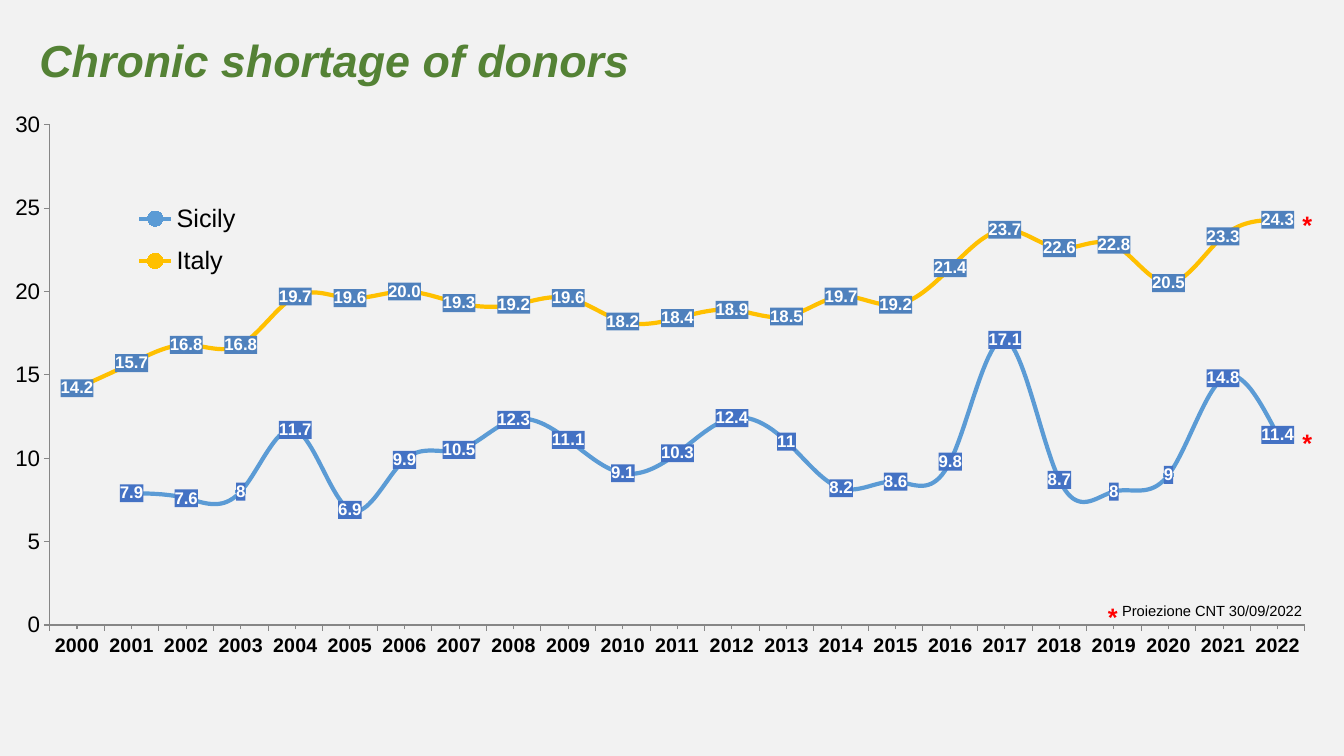
"""Build a slide charting organ donor rates in Sicily and Italy."""
from dataclasses import dataclass

from lxml import etree
from pptx import Presentation
from pptx.chart.data import CategoryChartData
from pptx.dml.color import RGBColor
from pptx.enum.chart import (XL_CHART_TYPE, XL_LABEL_POSITION, XL_LEGEND_POSITION,
                             XL_MARKER_STYLE, XL_TICK_MARK)
from pptx.enum.text import MSO_ANCHOR, MSO_AUTO_SIZE
from pptx.oxml import parse_xml
from pptx.oxml.ns import nsdecls, qn
from pptx.util import Inches, Pt

LINE_CHART = XL_CHART_TYPE.LINE_MARKERS
CENTERED = XL_LABEL_POSITION.CENTER
LEGEND_LEFT = XL_LEGEND_POSITION.LEFT
CIRCLE = XL_MARKER_STYLE.CIRCLE
TICK_OUT = XL_TICK_MARK.OUTSIDE
TICK_NONE = XL_TICK_MARK.NONE
BOTTOM = MSO_ANCHOR.BOTTOM
TOP = MSO_ANCHOR.TOP
GROW = MSO_AUTO_SIZE.SHAPE_TO_FIT_TEXT
NO_FIT = MSO_AUTO_SIZE.NONE

WIDTH, HEIGHT = Inches(13.33), Inches(7.5)


@dataclass(frozen=True)
class Theme:
    font: str = "Arial"
    page: str = "F2F2F2"
    title: str = "548235"
    text: str = "000000"
    star: str = "FF0000"
    label: str = "FFFFFF"
    axis: str = "868686"
    title_size: float = 32
    legend_size: float = 18
    star_size: float = 18
    value_size: float = 16
    year_size: float = 14
    label_size: float = 12
    note_size: float = 10.5
    base_size: float = 10


@dataclass(frozen=True)
class Share:
    left: float
    top: float
    width: float
    height: float

    def lengths(self) -> tuple[int, int, int, int]:
        return (int(self.left * WIDTH), int(self.top * HEIGHT),
                int(self.width * WIDTH), int(self.height * HEIGHT))


@dataclass(frozen=True)
class Region:
    name: str
    color: str
    label_fill: str
    number_format: str
    rates: tuple[float | None, ...]


THEME = Theme()
YEARS = [str(year) for year in range(2000, 2023)]
REGIONS = (
    Region("Sicily", "5B9BD5", "4472C4", "General",
           (None, 7.9, 7.6, 8, 11.7, 6.9, 9.9, 10.5, 12.3, 11.1, 9.1, 10.3,
            12.4, 11, 8.2, 8.6, 9.8, 17.1, 8.7, 8, 9, 14.8, 11.4)),
    Region("Italy", "FFC000", "4F81BD", "0.0",
           (14.2, 15.7, 16.8, 16.8, 19.7, 19.6, 20, 19.3, 19.2, 19.6, 18.2, 18.4,
            18.9, 18.5, 19.7, 19.2, 21.4, 23.7, 22.6, 22.8, 20.5, 23.3, 24.3)),
)
CHART_AREA = Share(0, 0.1347, 1, 0.7573)
PLOT_AREA = Share(0.037, 0.04, 0.934, 0.874)
LEGEND_AREA = Share(0.097, 0.155, 0.085, 0.172)
TITLE_AREA = Share(0.0293, 0.0413, 0.8627, 0.0733)
NOTE_AREA = Share(0.8275, 0.7893, 0.1523, 0.0373)
STAR_AREAS = (
    Share(0.9617, 0.2707, 0.0225, 0.0533),
    Share(0.817, 0.7893, 0.0225, 0.0587),
    Share(0.9617, 0.5587, 0.0225, 0.0533),
)


def style_font(font, size: float, color: str, bold: bool = False, italic: bool = False) -> None:
    font.name, font.size = THEME.font, Pt(size)
    font.bold, font.italic = bold, italic
    font.color.rgb = RGBColor.from_string(color)


def add_text(page, area: Share, text: str, *, size: float, color: str, bold: bool = False,
             italic: bool = False, wrap: bool = False, margin: bool = True,
             anchor: MSO_ANCHOR = TOP, fit: MSO_AUTO_SIZE = GROW) -> None:
    frame = page.shapes.add_textbox(*area.lengths()).text_frame
    frame.word_wrap, frame.auto_size, frame.vertical_anchor = wrap, fit, anchor
    if not margin:
        frame.margin_left = frame.margin_top = frame.margin_right = frame.margin_bottom = 0
    span = frame.paragraphs[0].add_run()
    span.text = text
    style_font(span.font, size, color, bold, italic)


def manual_layout(area: Share, target: str = ""):
    layout = parse_xml(f"<c:layout {nsdecls('c')}><c:manualLayout/></c:layout>")
    settings = [("layoutTarget", target)] if target else []
    settings += [("xMode", "edge"), ("yMode", "edge"), ("x", area.left), ("y", area.top),
                 ("w", area.width), ("h", area.height)]
    for name, value in settings:
        etree.SubElement(layout[0], qn(f"c:{name}"), val=str(value))
    return layout


def style_series(series, region: Region) -> None:
    color = RGBColor.from_string(region.color)
    series.smooth = True
    series.format.line.width = Pt(3)
    series.format.line.color.rgb = color
    series.marker.style, series.marker.size = CIRCLE, 7
    series.marker.format.fill.solid()
    series.marker.format.fill.fore_color.rgb = color
    series.marker.format.line.color.rgb = color
    labels = series.data_labels
    labels.show_value, labels.position = True, CENTERED
    labels.number_format, labels.number_format_is_linked = region.number_format, False
    style_font(labels.font, THEME.label_size, THEME.label, bold=True)
    fill = parse_xml(f"<c:spPr {nsdecls('c', 'a')}><a:solidFill>"
                     f'<a:srgbClr val="{region.label_fill}"/></a:solidFill></c:spPr>')
    labels._element.find(qn("c:txPr")).addprevious(fill)


def style_axis(axis, size: float, bold: bool = False) -> None:
    axis.has_major_gridlines = False
    axis.major_tick_mark, axis.minor_tick_mark = TICK_OUT, TICK_NONE
    axis.format.line.color.rgb = RGBColor.from_string(THEME.axis)
    axis.format.line.width = Pt(0.75)
    style_font(axis.tick_labels.font, size, THEME.text, bold)


def add_rate_chart(page) -> None:
    data = CategoryChartData()
    data.categories = YEARS
    for region in REGIONS:
        data.add_series(region.name, region.rates)
    chart = page.shapes.add_chart(LINE_CHART, *CHART_AREA.lengths(), data).chart
    style_font(chart.font, THEME.base_size, THEME.text)
    chart.has_title = False
    plot = chart.plots[0]
    plot.vary_by_categories = False
    for series, region in zip(plot.series, REGIONS):
        style_series(series, region)

    style_axis(chart.category_axis, THEME.year_size, bold=True)
    chart.category_axis.minor_tick_mark = TICK_OUT
    rates = chart.value_axis
    style_axis(rates, THEME.value_size)
    rates.minimum_scale, rates.maximum_scale, rates.major_unit = 0, 30, 5
    rates.tick_labels.number_format = "0"
    rates.tick_labels.number_format_is_linked = False

    chart.has_legend = True
    legend = chart.legend
    legend.position, legend.include_in_layout = LEGEND_LEFT, True
    style_font(legend.font, THEME.legend_size, THEME.text)
    for old in legend._element.findall(qn("c:layout")):
        legend._element.remove(old)
    legend._element.find(qn("c:legendPos")).addnext(manual_layout(LEGEND_AREA))
    plot_area = chart._chartSpace.chart.plotArea
    for old in plot_area.findall(qn("c:layout")):
        plot_area.remove(old)
    plot_area.insert(0, manual_layout(PLOT_AREA, "inner"))


def main() -> None:
    deck = Presentation()
    deck.slide_width, deck.slide_height = WIDTH, HEIGHT
    page = deck.slides.add_slide(deck.slide_layouts[6])
    page.background.fill.solid()
    page.background.fill.fore_color.rgb = RGBColor.from_string(THEME.page)
    add_rate_chart(page)
    add_text(page, NOTE_AREA, "Proiezione CNT 30/09/2022", size=THEME.note_size, color=THEME.text)
    for area in STAR_AREAS:
        add_text(page, area, "*", size=THEME.star_size, color=THEME.star, bold=True)
    add_text(page, TITLE_AREA, "Chronic shortage of donors", size=THEME.title_size,
             color=THEME.title, bold=True, italic=True, wrap=True, margin=False,
             anchor=BOTTOM, fit=NO_FIT)
    deck.save("out.pptx")


if __name__ == "__main__":
    main()
